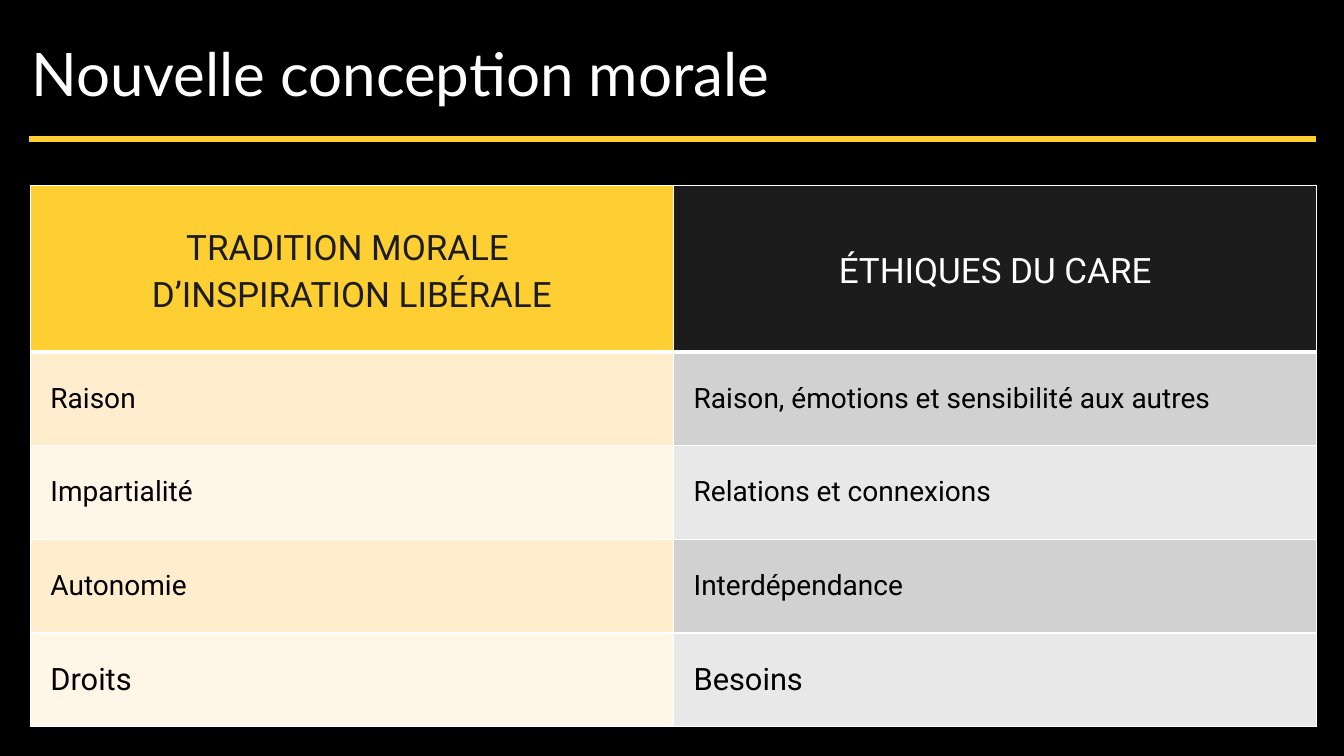
from lxml import etree
from pptx import Presentation
from pptx.dml.color import RGBColor
from pptx.enum.shapes import MSO_CONNECTOR
from pptx.enum.text import MSO_ANCHOR, MSO_AUTO_SIZE, PP_ALIGN
from pptx.oxml import parse_xml
from pptx.oxml.ns import nsdecls, qn
from pptx.util import Inches, Pt

LEFT, CENTER = PP_ALIGN.LEFT, PP_ALIGN.CENTER
MIDDLE = MSO_ANCHOR.MIDDLE
NO_FIT = MSO_AUTO_SIZE.NONE
STRAIGHT = MSO_CONNECTOR.STRAIGHT

GOLD, DARK, WHITE, BLACK = "FECF33", "1C1C1C", "FFFFFF", "000000"
HEADS = [
    ("TRADITION MORALE \nD’INSPIRATION LIBÉRALE", GOLD, DARK),
    ("ÉTHIQUES DU CARE", DARK, WHITE),
]
ROWS = [
    ("Raison", "Raison, émotions et sensibilité aux autres"),
    ("Impartialité", "Relations et connexions"),
    ("Autonomie", "Interdépendance"),
    ("Droits", "Besoins"),
]
BANDS = [("FFEDCE", "D1D1D1"), ("FFF6E8", "E8E8E8")]


def color(code):
    return RGBColor.from_string(code)


class Deck:
    def __init__(self):
        self.file = Presentation()
        self.file.slide_width = Inches(13.33)
        self.file.slide_height = Inches(7.5)
        self.slide = self.file.slides.add_slide(self.file.slide_layouts[5])
        fill = self.slide.background.fill
        fill.solid()
        fill.fore_color.rgb = color(BLACK)

    def style(self, para, size, ink, face="Roboto", align=LEFT):
        para.alignment = align
        para.font.name = face
        para.font.size = Pt(size)
        para.font.color.rgb = color(ink)

    def title(self, text, left, top, width, height):
        shape = self.slide.shapes.title
        shape.left, shape.top = Inches(left), Inches(top)
        shape.width, shape.height = Inches(width), Inches(height)
        frame = shape.text_frame
        frame.text = text
        frame.auto_size = NO_FIT
        frame.vertical_anchor = MIDDLE
        self.style(frame.paragraphs[0], 42.9, WHITE, "Lato")

    def rule(self, left, right, y):
        line = self.slide.shapes.add_connector(
            STRAIGHT, Inches(left), Inches(y), Inches(right), Inches(y))
        line.line.color.rgb = color(GOLD)
        line.line.width = Pt(4.5)
        etree.SubElement(line._element.spPr, qn("a:effectLst"))

    def edges(self, cell, top, bottom):
        props = cell._tc.get_or_add_tcPr()
        sides = [("L", 1), ("R", 1), ("T", top), ("B", bottom)]
        for spot, (side, width) in enumerate(sides):
            props.insert(spot, parse_xml(
                f'<a:ln{side} {nsdecls("a")} w="{Pt(width)}"><a:solidFill>'
                f'<a:srgbClr val="{WHITE}"/></a:solidFill></a:ln{side}>'))

    def cell(self, cell, text, fill, size, ink, align=LEFT):
        cell.text_frame.text = ""
        para = cell.text_frame.paragraphs[0]
        para.text = text
        self.style(para, size, ink, align=align)
        cell.vertical_anchor = MIDDLE
        cell.fill.solid()
        cell.fill.fore_color.rgb = color(fill)
        return para

    def table(self, left, top, width, head, step):
        count = len(ROWS) + 1
        grid = self.slide.shapes.add_table(
            count, len(HEADS), Inches(left), Inches(top), Inches(width),
            Inches(head + step * len(ROWS))).table
        grid.first_row = grid.horz_banding = False
        for col in grid.columns:
            col.width = Inches(width / len(HEADS))
        for row in range(count):
            grid.rows[row].height = Inches(step if row else head)
        for col, (text, fill, ink) in enumerate(HEADS):
            cell = grid.cell(0, col)
            para = self.cell(cell, text, fill, 25, ink, CENTER)
            para.line_spacing = 1.15
            para.space_after = Pt(8)
            self.edges(cell, 1, 3)
        for row, texts in enumerate(ROWS, 1):
            fills = BANDS[(row - 1) % 2]
            size = 22 if row == len(ROWS) else 20
            for col, text in enumerate(texts):
                cell = grid.cell(row, col)
                self.cell(cell, text, fills[col], size, BLACK)
                cell.margin_left, cell.margin_right = Inches(0.2), Inches(0.12)
                cell.margin_top = cell.margin_bottom = Inches(0.06)
                self.edges(cell, 3 if row == 1 else 1, 1)


def main():
    deck = Deck()
    deck.table(0.3, 1.84, 12.76, 1.65, 0.93)
    deck.rule(0.29, 13.05, 1.38)
    deck.title("Nouvelle conception morale", 0.21, 0.28, 12.84, 0.88)
    deck.file.save("out.pptx")


if __name__ == "__main__":
    main()
